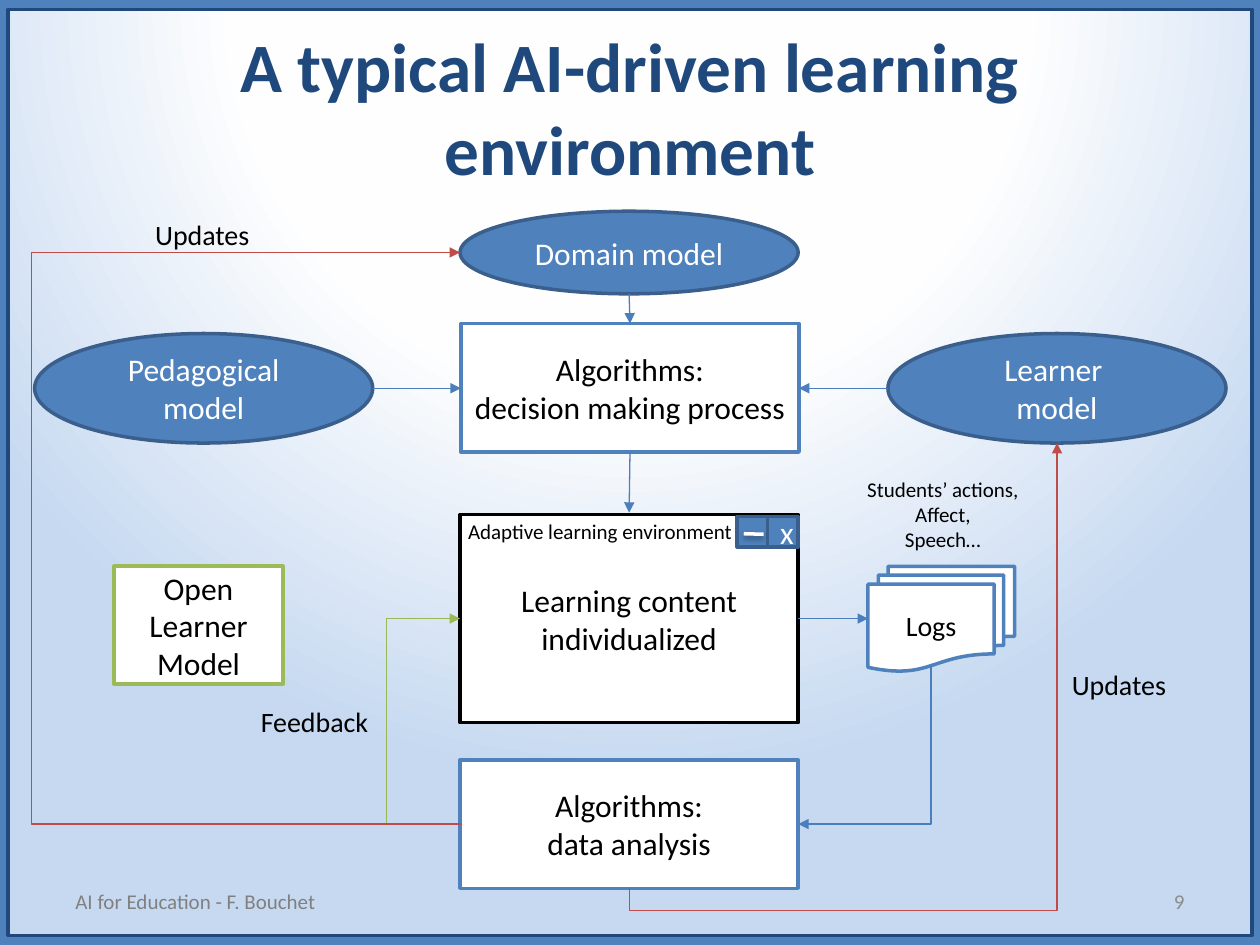
import pptx
import pptx.util
import pptx.oxml
import pptx.oxml.ns
import pptx.dml.color
import pptx.enum.shapes
import pptx.enum.text

Pt = pptx.util.Pt
KINDS = pptx.enum.shapes.MSO_SHAPE
LINKS = pptx.enum.shapes.MSO_CONNECTOR
ALIGN = pptx.enum.text.PP_ALIGN
ANCHOR = pptx.enum.text.MSO_ANCHOR
AUTO = pptx.enum.text.MSO_AUTO_SIZE
NS = pptx.oxml.ns.nsdecls("a")

COLORS = {
    "white": "FFFFFF", "black": "000000", "navy": "1F497D", "blue": "4F81BD",
    "edge": "3A5F8C", "green": "9BBB59", "flow": "4B7EBC", "feedback": "98B955",
    "update": "BF4C48", "footer": "808080", "number": "8C8C8C",
    "near_white": "FEFEFE", "sky": "C6D9F1",
}
BACKDROP = [(0, "white"), (50, "near_white"), (100, "sky")]
FRAME = (-8.6, -7.9, 737.3, 555.8)

BOX_W, BOX_H = 193.2, 73.4
CENTER_X = 359.5
BOX_X = CENTER_X - BOX_W / 2
BOX_RIGHT = BOX_X + BOX_W
MODEL_Y, MODEL_H = 190.6, 62.6
MODEL_MID = MODEL_Y + MODEL_H / 2
CONTENT_MID = 353.5
ANALYSIS_Y = 434.2
ANALYSIS_MID = ANALYSIS_Y + BOX_H / 2
LEARNER_X = 507.4
LEARNER_MID = LEARNER_X + BOX_W / 2

STYLES = {
    "model": (KINDS.OVAL, "blue", "edge", "white", 18),
    "process": (KINDS.FLOWCHART_PROCESS, "white", "blue", "black", 18),
    "window": (KINDS.FLOWCHART_PROCESS, "white", "black", "black", 18),
    "button": (KINDS.FLOWCHART_PROCESS, "blue", "edge", "white", 18),
    "logs": (KINDS.FLOWCHART_MULTIDOCUMENT, "white", "blue", "black", 16),
    "open": (KINDS.FLOWCHART_PROCESS, "white", "green", "black", 18),
    "frame": (KINDS.FRAME, "blue", "navy", "white", 18),
}
NODES = [
    ("model", "Domain model", BOX_X, 120.7, BOX_W, 47.2),
    ("model", "Pedagogical model", 19.8, MODEL_Y, BOX_W, MODEL_H),
    ("model", "Learner \vmodel", LEARNER_X, MODEL_Y, BOX_W, MODEL_H),
    ("process", "Algorithms:\ndecision making process", BOX_X + 0.5, 184.9, BOX_W, BOX_H),
    ("logs", "Logs", 496, 323.6, 83.8, 60),
    ("process", "Algorithms:\ndata analysis", BOX_X, ANALYSIS_Y, BOX_W, BOX_H),
    ("open", "Open\nLearner\nModel", 65.2, 323.6, 96.5, 67.4),
]
BUTTON = 17.4
WINDOW = [
    ("window", "Learning content\vindividualized", BOX_X, 294, BOX_W, 119),
    ("button", "x", BOX_RIGHT - BUTTON, 295.2, BUTTON, BUTTON),
    ("button", "", BOX_RIGHT - 2 * BUTTON, 295.2, BUTTON, BUTTON),
]
WINDOW_TITLE = ("Adaptive learning environment", 260.4, 293, 167.3, 21.8, 12)
DASH = (425, 305, 436.4, 305.3)

LABELS = [
    ("Students’ actions,\nAffect,\nSpeech…", 487.7, 268.8, 102.2, 50.9, 12, ALIGN.CENTER),
    ("Feedback", 142, 398.9, 76.3, 26.6, 16),
    ("Updates", 605.4, 378.2, 69.1, 26.6, 16),
    ("Updates", 81.6, 121, 69.1, 26.6, 16),
]
HEADINGS = [
    ("A typical AI-driven learning environment", 36, 15.8, 648, 90, 39.6, ALIGN.CENTER, "navy", True),
    ("9", 516.2, 500.5, 167.8, 28.8, 12, ALIGN.RIGHT, "number", False),
    ("AI for Education - F. Bouchet", 36, 500.5, 445.7, 28.8, 12, ALIGN.LEFT, "footer", False),
]

ARROWS = [
    ("straight", "flow", (CENTER_X, 167.9), (CENTER_X + 0.5, 184.9), None),
    ("straight", "flow", (CENTER_X + 0.5, 258.3), (CENTER_X, 293), None),
    ("across", "flow", (213, MODEL_MID), (BOX_X + 0.5, MODEL_MID), None),
    ("across", "flow", (LEARNER_X, MODEL_MID), (BOX_RIGHT + 0.5, MODEL_MID), None),
    ("across", "flow", (BOX_RIGHT, CONTENT_MID), (496, CONTENT_MID), None),
    ("corner", "flow", (532, 380.6), (BOX_RIGHT, ANALYSIS_MID), None),
    ("across", "feedback", (BOX_X + 1, ANALYSIS_MID), (BOX_X, CONTENT_MID), 43.3),
    ("down", "update", (CENTER_X, ANALYSIS_Y + BOX_H), (LEARNER_MID, MODEL_Y + MODEL_H), -0.05),
    ("across", "update", (BOX_X + 1, ANALYSIS_MID), (BOX_X, 144.3), 248),
]


def rgb(name):
    return pptx.dml.color.RGBColor.from_string(COLORS[name])


def put(target, values):
    for name, value in values.items():
        setattr(target, name, value)


def write(holder, text, size, color, align, frame_format, bold=False):
    frame = holder.text_frame
    frame.text = text
    put(frame, frame_format)
    for paragraph in frame.paragraphs:
        paragraph.alignment = align
        for run in paragraph.runs:
            put(run.font, {"name": "Calibri", "size": Pt(size), "bold": bold})
            run.font.color.rgb = rgb(color)


def add_node(parts, style, text, *place):
    kind, fill, edge, ink, size = STYLES[style]
    node = parts.add_shape(kind, *map(Pt, place))
    node.shadow.inherit = False
    node.fill.solid()
    node.fill.fore_color.rgb = rgb(fill)
    node.line.color.rgb = rgb(edge)
    node.line.width = Pt(2)
    if text:
        write(node, text, size, ink, ALIGN.CENTER,
              {"word_wrap": True, "vertical_anchor": ANCHOR.MIDDLE})
    return node


def add_label(parts, text, left, top, width, height, size, align=ALIGN.LEFT):
    label = parts.add_textbox(*map(Pt, (left, top, width, height)))
    write(label, text, size, "black", align,
          {"word_wrap": False, "auto_size": AUTO.SHAPE_TO_FIT_TEXT})


def add_line(parts, kind, color, width, start, end, effect=""):
    line = parts.add_connector(kind, *map(Pt, (*start, *end)))
    line.line.color.rgb = rgb(color)
    line.line.width = Pt(width)
    line.element.spPr.append(pptx.oxml.parse_xml(f"<a:effectLst {NS}>{effect}</a:effectLst>"))
    return line


def add_arrow(parts, route, color, start, end, bend):
    turned = route in ("corner", "down")
    if turned:
        mid_x, mid_y = (start[0] + end[0]) / 2, (start[1] + end[1]) / 2
        half_x, half_y = (end[0] - start[0]) / 2, (end[1] - start[1]) / 2
        start, end = (mid_x - half_y, mid_y + half_x), (mid_x + half_y, mid_y - half_x)
    kind = LINKS.STRAIGHT if route == "straight" else LINKS.ELBOW
    arrow = add_line(parts, kind, color, 0.75, start, end)
    shape_format = arrow.element.spPr
    shape_format.find(pptx.oxml.ns.qn("a:ln")).append(
        pptx.oxml.parse_xml(f'<a:tailEnd {NS} type="triangle"/>'))
    if turned:
        shape_format.find(pptx.oxml.ns.qn("a:xfrm")).set("rot", "5400000")
    geometry = shape_format.find(pptx.oxml.ns.qn("a:prstGeom"))
    if route == "corner":
        geometry.set("prst", "bentConnector2")
    if bend is not None:
        geometry[0].append(pptx.oxml.parse_xml(
            f'<a:gd {NS} name="adj1" fmla="val {round(bend * 100000)}"/>'))


def paint_backdrop(slide):
    slide.background.fill.solid()
    holder = slide.element.xpath(".//p:bgPr")[0]
    stops = "".join(f'<a:gs pos="{at * 1000}"><a:srgbClr val="{COLORS[color]}"/></a:gs>'
                    for at, color in BACKDROP)
    holder.replace(holder[0], pptx.oxml.parse_xml(
        f'<a:gradFill {NS} rotWithShape="1"><a:gsLst>{stops}</a:gsLst><a:path path="circle">'
        '<a:fillToRect l="50000" t="-80000" r="50000" b="180000"/></a:path></a:gradFill>'))


def main():
    deck = pptx.Presentation()
    put(deck, {"slide_width": Pt(720), "slide_height": Pt(540)})
    slide = deck.slides.add_slide(deck.slide_layouts[6])
    paint_backdrop(slide)
    parts = slide.shapes
    add_node(parts, "frame", "", *FRAME).adjustments[0] = 0.024
    for text, left, top, width, height, size, align, color, bold in HEADINGS:
        heading = parts.add_textbox(*map(Pt, (left, top, width, height)))
        write(heading, text, size, color, align,
              {"word_wrap": True, "vertical_anchor": ANCHOR.MIDDLE}, bold)
    for node in NODES:
        add_node(parts, *node)
    window = parts.add_group_shape().shapes
    for pane in WINDOW:
        add_node(window, *pane)
    add_line(window, LINKS.STRAIGHT, "white", 2, DASH[:2], DASH[2:],
             f'<a:outerShdw blurRad="{Pt(3.1)}" dist="{Pt(1.6)}" dir="5400000">'
             f'<a:srgbClr val="{COLORS["black"]}"><a:alpha val="38000"/></a:srgbClr></a:outerShdw>')
    add_label(window, *WINDOW_TITLE)
    for arrow in ARROWS:
        add_arrow(parts, *arrow)
    for label in LABELS:
        add_label(parts, *label)
    deck.save("out.pptx")


if __name__ == "__main__":
    main()
